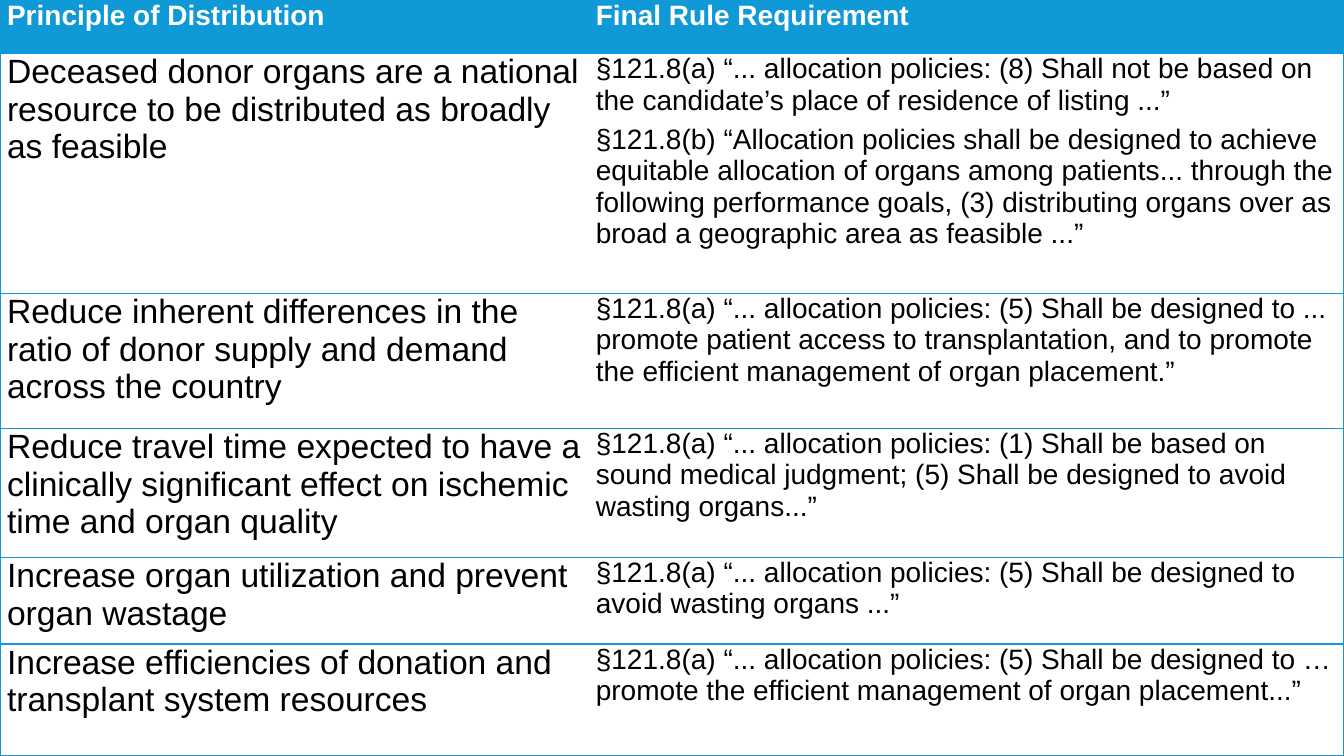
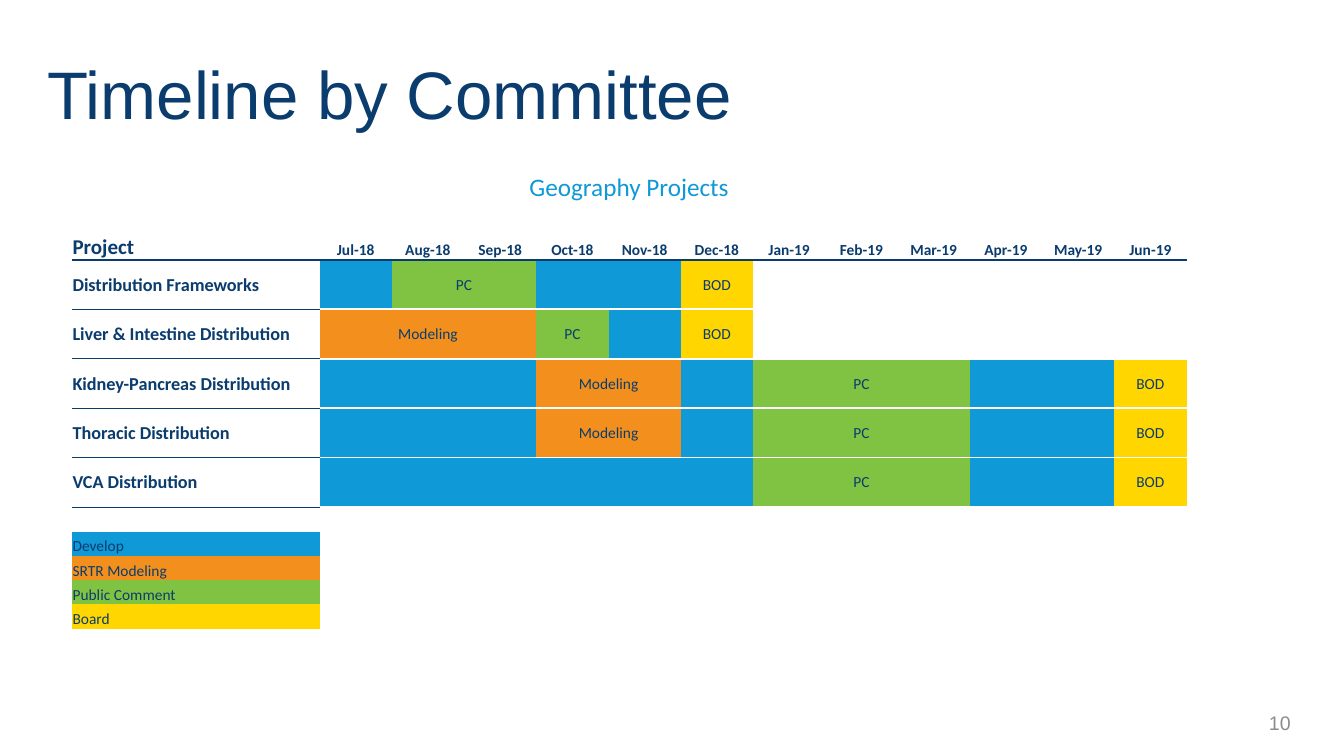
from dataclasses import dataclass

from lxml import etree
from pptx import Presentation
from pptx import util as u
from pptx.dml.color import RGBColor
from pptx.enum import text
from pptx.oxml import ns


@dataclass(frozen=True)
class Theme:
    blue: str = "0F99D6"
    navy: str = "0A3C6E"
    green: str = "80C342"
    orange: str = "F3901D"
    yellow: str = "FFD600"
    white: str = "FFFFFF"
    black: str = "000000"
    grey: str = "8C8C8C"
    body_font: str = "Arial"
    grid_font: str = "Calibri"
    title: int = 48
    principle: int = 24
    rule: int = 20
    caption: int = 18
    heading: int = 15
    footer: int = 14
    project: int = 13
    label: int = 11


@dataclass(frozen=True)
class Box:
    left: float
    top: float
    width: float
    height: float

    def emu(self):
        return [u.Inches(side) for side in (self.left, self.top, self.width, self.height)]


THEME = Theme()
PAGE = Box(0, 0, 13.33, 7.5)
PLAIN_TABLE = "{2D5ABB26-0587-4C30-8999-92F81FD0307C}"
LEFT, CENTER, RIGHT = text.PP_ALIGN.LEFT, text.PP_ALIGN.CENTER, text.PP_ALIGN.RIGHT
TOP, MIDDLE, BOTTOM = text.MSO_ANCHOR.TOP, text.MSO_ANCHOR.MIDDLE, text.MSO_ANCHOR.BOTTOM

RULES = [
    ("Principle of Distribution", "Final Rule Requirement"),
    ("Deceased donor organs are a national resource to be distributed as broadly as feasible",
     "§121.8(a) “... allocation policies: (8) Shall not be based on the candidate’s place of "
     "residence of listing ...”\n"
     "§121.8(b) “Allocation policies shall be designed to achieve equitable allocation of organs "
     "among patients... through the following performance goals, (3) distributing organs over as "
     "broad a geographic area as feasible ...”"),
    ("Reduce inherent differences in the ratio of donor supply and demand across the country",
     "§121.8(a) “... allocation policies: (5) Shall be designed to ... promote patient access to "
     "transplantation, and to promote the efficient management of organ placement.”"),
    ("Reduce travel time expected to have a clinically significant effect on ischemic time and "
     "organ quality",
     "§121.8(a) “... allocation policies: (1) Shall be based on sound medical judgment; (5) Shall "
     "be designed to avoid wasting organs...”"),
    ("Increase organ utilization and prevent organ wastage",
     "§121.8(a) “... allocation policies: (5) Shall be designed to avoid wasting organs ...”"),
    ("Increase efficiencies of donation and transplant system resources",
     "§121.8(a) “... allocation policies: (5) Shall be designed to … promote the efficient "
     "management of organ placement...”"),
]

MONTHS = ["Jul-18", "Aug-18", "Sep-18", "Oct-18", "Nov-18", "Dec-18",
          "Jan-19", "Feb-19", "Mar-19", "Apr-19", "May-19", "Jun-19"]
STAGES = {
    "develop": ("Develop", "", THEME.blue),
    "modeling": ("SRTR Modeling", "Modeling", THEME.orange),
    "comment": ("Public Comment", "PC", THEME.green),
    "board": ("Board", "BOD", THEME.yellow),
}
PANCREAS_STAGES = [("develop", 3), ("modeling", 2), ("develop", 1),
                   ("comment", 3), ("develop", 2), ("board", 1)]
PROJECTS = [
    ("Distribution Frameworks",
     [("develop", 1), ("comment", 2), ("develop", 2), ("board", 1)]),
    ("Liver & Intestine Distribution",
     [("modeling", 3), ("comment", 1), ("develop", 1), ("board", 1)]),
    ("Kidney-Pancreas Distribution", PANCREAS_STAGES),
    ("Thoracic Distribution", PANCREAS_STAGES),
    ("VCA Distribution",
     [("develop", 6), ("comment", 3), ("develop", 2), ("board", 1)]),
]


def style_paragraph(paragraph, size, color, font, bold=False, align=LEFT, after=0):
    paragraph.alignment = align
    paragraph.space_after = u.Pt(after)
    paragraph.font.size = u.Pt(size)
    paragraph.font.name = font
    paragraph.font.bold = bold
    paragraph.font.color.rgb = RGBColor.from_string(color)


def add_text(slide, box, words, size, color, align=LEFT):
    frame = slide.shapes.add_textbox(*box.emu()).text_frame
    frame.word_wrap = True
    frame.vertical_anchor = MIDDLE
    frame.text = words
    style_paragraph(frame.paragraphs[0], size, color, THEME.body_font, align=align)


def add_grid(slide, box, columns, rows):
    table = slide.shapes.add_table(len(rows), len(columns), *box.emu()).table
    table.first_row = table.horz_banding = False
    table._tbl.tblPr.find(ns.qn("a:tableStyleId")).text = PLAIN_TABLE
    for column, share in zip(table.columns, columns):
        column.width = u.Inches(box.width * share / sum(columns))
    for row, share in zip(table.rows, rows):
        row.height = u.Inches(box.height * share / sum(rows))
    return table


def set_borders(cell, **sides):
    properties = cell._tc.get_or_add_tcPr()
    for side in "LRTB":
        if side in sides:
            color, width = sides[side]
            line = etree.SubElement(properties, ns.qn(f"a:ln{side}"), w=str(u.Pt(width)))
            solid = etree.SubElement(line, ns.qn("a:solidFill"))
            etree.SubElement(solid, ns.qn("a:srgbClr"), val=color)


def set_fill(cell, color):
    if color:
        cell.fill.solid()
        cell.fill.fore_color.rgb = RGBColor.from_string(color)
    else:
        cell.fill.background()


def set_margins(cell, left, top, right, bottom):
    cell.margin_left, cell.margin_top = u.Inches(left), u.Inches(top)
    cell.margin_right, cell.margin_bottom = u.Inches(right), u.Inches(bottom)


def write_cell(cell, words, anchor, **style):
    cell.text_frame.text = words
    cell.vertical_anchor = anchor
    for paragraph in cell.text_frame.paragraphs:
        style_paragraph(paragraph, **style)


def write_grid_cell(cell, words, size=THEME.label, color=THEME.navy, bold=False,
                    align=LEFT, anchor=BOTTOM):
    write_cell(cell, words, anchor, size=size, color=color, font=THEME.grid_font,
               bold=bold, align=align)


def add_rules_table(slide, box):
    table = add_grid(slide, box, [5.84, 7.49], [0.53, 2.38, 1.34, 1.28, 0.86, 1.11])
    edge = (THEME.blue, 1)
    for row, entries in enumerate(RULES):
        header = row == 0
        for column, words in enumerate(entries):
            cell = table.cell(row, column)
            set_margins(cell, 0.07, 0, 0.07, 0)
            set_borders(cell, T=edge, B=edge, **{"LR"[column]: edge})
            set_fill(cell, THEME.blue if header else THEME.white)
            write_cell(cell, words, TOP,
                       size=THEME.rule if header or column else THEME.principle,
                       color=THEME.white if header else THEME.black,
                       font=THEME.body_font, bold=header, after=6)


def prepare_timeline_cells(table):
    for cell in table.iter_cells():
        set_margins(cell, 0.01, 0.01, 0.01, 0)
        set_fill(cell, None)
        ending = etree.SubElement(cell.text_frame.paragraphs[0]._p, ns.qn("a:endParaRPr"))
        ending.set("sz", str(THEME.label * 100))


def add_month_header(table, row):
    for column, words in enumerate(["Project"] + MONTHS):
        cell = table.cell(row, column)
        set_borders(cell, B=(THEME.navy, 1.5))
        write_grid_cell(cell, words, THEME.label if column else THEME.heading,
                        bold=True, align=CENTER if column else LEFT)


def add_project_row(table, row, name, stages, first):
    for column in range(len(MONTHS) + 1):
        rule = (THEME.white, 1.5) if column else (THEME.navy, 0.5)
        set_borders(table.cell(row, column), T=(THEME.navy, 1.5) if first else rule, B=rule)
    write_grid_cell(table.cell(row, 0), name, THEME.project, bold=True, anchor=MIDDLE)
    start = 1
    for stage, months in stages:
        _, label, color = STAGES[stage]
        for column in range(start, start + months):
            set_fill(table.cell(row, column), color)
        if label:
            cell = table.cell(row, start)
            if months > 1:
                cell.merge(table.cell(row, start + months - 1))
            write_grid_cell(cell, label, align=CENTER, anchor=MIDDLE)
        start += months


def add_legend(table, row):
    for offset, (name, _, color) in enumerate(STAGES.values()):
        cell = table.cell(row + offset, 0)
        set_fill(cell, color)
        write_grid_cell(cell, name)


def add_timeline(slide, box):
    columns = [2.46] + [8.6 / len(MONTHS)] * len(MONTHS)
    rows = [0.37, 0.24, 0.32] + [0.49] * len(PROJECTS) + [0.25] + [0.24] * len(STAGES)
    table = add_grid(slide, box, columns, rows)
    prepare_timeline_cells(table)
    caption = table.cell(0, 0)
    caption.merge(table.cell(0, len(MONTHS)))
    write_grid_cell(caption, "Geography Projects", THEME.caption, THEME.blue, align=CENTER)
    add_month_header(table, 2)
    for index, (name, stages) in enumerate(PROJECTS):
        add_project_row(table, 3 + index, name, stages, index == 0)
    add_legend(table, 4 + len(PROJECTS))


def add_timeline_slide(slide):
    add_text(slide, Box(10.64, 6.97, 2.26, 0.4), "10", THEME.footer, THEME.grey, RIGHT)
    add_timeline(slide, Box(0.71, 1.65, 11.06, 4.59))
    add_text(slide, Box(0.37, 0.45, 12.75, 0.93), "Timeline by Committee",
             THEME.title, THEME.navy)


def main():
    presentation = Presentation()
    presentation.slide_width = u.Inches(PAGE.width)
    presentation.slide_height = u.Inches(PAGE.height)
    blank = presentation.slide_layouts[6]
    add_rules_table(presentation.slides.add_slide(blank), PAGE)
    add_timeline_slide(presentation.slides.add_slide(blank))
    presentation.save("out.pptx")


if __name__ == "__main__":
    main()
